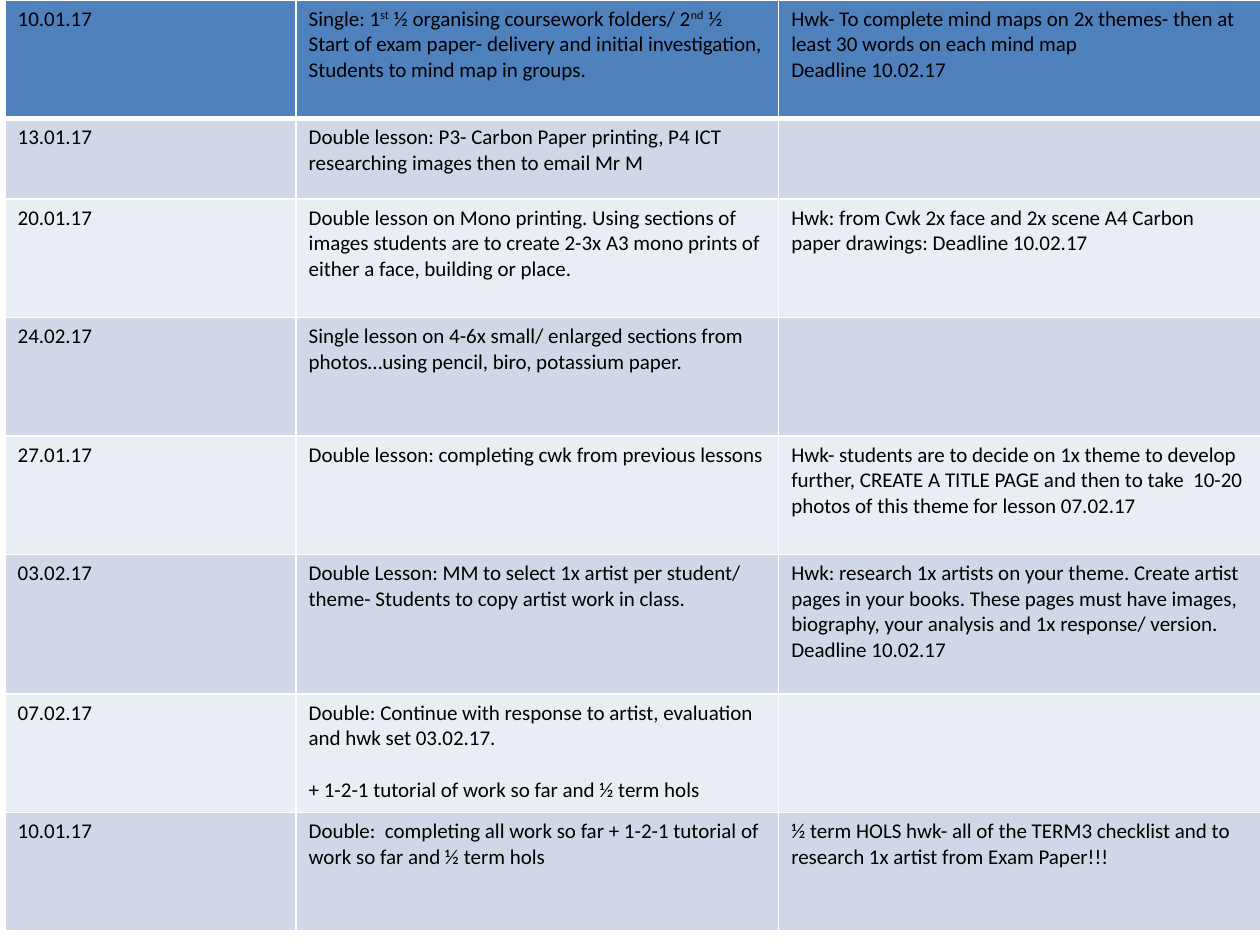
from lxml import etree
from pptx import Presentation
from pptx.dml.color import RGBColor
from pptx.oxml.ns import qn
from pptx.util import Inches, Pt

COLORS = {"header": "4F81BD", "odd": "D0D8E8", "even": "E9EDF4",
          "border": "FFFFFF", "text": "000000"}
COL_WIDTHS = [2.31, 3.83, 3.83]
ROW_HEIGHTS = [0.94, 0.64, 0.94, 0.94, 0.94, 1.11, 0.94, 0.94]
SUPERSCRIPTS = ("st", "nd")

# Each cell is a list of paragraphs, each paragraph a list of runs
LESSONS = [
    ("10.01.17",
     [["Single: 1", "st", " ½ organising coursework folders/ 2", "nd",
       " ½ Start of exam paper- delivery and initial investigation, "
       "Students to mind map in groups."]],
     [["Hwk- To complete mind maps on 2x themes- then at least 30 words "
       "on each mind map"], ["Deadline 10.02.17"]]),
    ("13.01.17",
     [["Double lesson: P3- Carbon Paper printing, P4 ICT researching images "
       "then to email Mr M"]],
     []),
    ("20.01.17",
     [["Double lesson on Mono printing. Using sections of images students are "
       "to create 2-3x A3 mono prints of either a face, building or place."]],
     [["Hwk: from Cwk 2x face and 2x scene A4 Carbon paper drawings: "
       "Deadline 10.02.17"]]),
    ("24.02.17",
     [["Single lesson on 4-6x small/ enlarged sections from photos…using "
       "pencil, biro, potassium paper."]],
     []),
    ("27.01.17",
     [["Double lesson: completing cwk from previous lessons"]],
     [["Hwk- students are to decide on 1x theme to develop further, CREATE A "
       "TITLE PAGE and then to take  10-20 photos of this theme for lesson "
       "07.02.17"]]),
    ("03.02.17",
     [["Double Lesson: MM to select 1x artist per student/ theme- Students to "
       "copy artist work in class."]],
     [["Hwk: research 1x artists on your theme. Create artist pages in your "
       "books. These pages must have images, biography, your analysis and 1x "
       "response/ version. Deadline 10.02.17"]]),
    ("07.02.17",
     [["Double: Continue with response to artist, evaluation and hwk set "
       "03.02.17."], ["+ 1-2-1 tutorial of work so far and ½ term hols"]],
     []),
    ("10.01.17",
     [["Double:  completing all work so far + 1-2-1 tutorial of work so far "
       "and ½ term hols"]],
     [["½ term HOLS hwk- all of the TERM3 checklist and to research 1x artist "
       "from Exam Paper!!!"]]),
]


def add_border(cell, side, width):
    ln = etree.SubElement(cell._tc.get_or_add_tcPr(), qn(f"a:ln{side}"),
                          w=str(Pt(width)))
    fill = etree.SubElement(ln, qn("a:solidFill"))
    etree.SubElement(fill, qn("a:srgbClr"), val=COLORS["border"])


def fill_text(tf, paragraphs):
    for i, runs in enumerate(paragraphs):
        p = tf.paragraphs[0] if i == 0 else tf.add_paragraph()
        for text in runs:
            r = p.add_run()
            r.text = text
            r.font.size = Pt(12)
            r.font.name = "Calibri"
            r.font.color.rgb = RGBColor.from_string(COLORS["text"])
            if text in SUPERSCRIPTS:
                r._r.get_or_add_rPr().set("baseline", "30000")


prs = Presentation()
prs.slide_width, prs.slide_height = Inches(10), Inches(7.5)
s = prs.slides.add_slide(prs.slide_layouts[6])

# Lesson plan table
table = s.shapes.add_table(
    len(LESSONS), len(COL_WIDTHS), Inches(0.04), Inches(0),
    Inches(sum(COL_WIDTHS)), Inches(sum(ROW_HEIGHTS))).table
for column, width in zip(table.columns, COL_WIDTHS):
    column.width = Inches(width)
for row, height in zip(table.rows, ROW_HEIGHTS):
    row.height = Inches(height)

# Cells: borders, banded fill and text
for i, (date, lesson, homework) in enumerate(LESSONS):
    band = "header" if i == 0 else "odd" if i % 2 else "even"
    for j, paragraphs in enumerate(([[date]], lesson, homework)):
        cell = table.cell(i, j)
        for side in "LRTB":
            under_header = (i, side) in ((0, "B"), (1, "T"))
            add_border(cell, side, 3 if under_header else 1)
        cell.fill.solid()
        cell.fill.fore_color.rgb = RGBColor.from_string(COLORS[band])
        fill_text(cell.text_frame, paragraphs)

# One-line gap above the tutorial note
table.cell(6, 1).text_frame.paragraphs[1].space_before = Pt(14.6)

prs.save("out.pptx")
